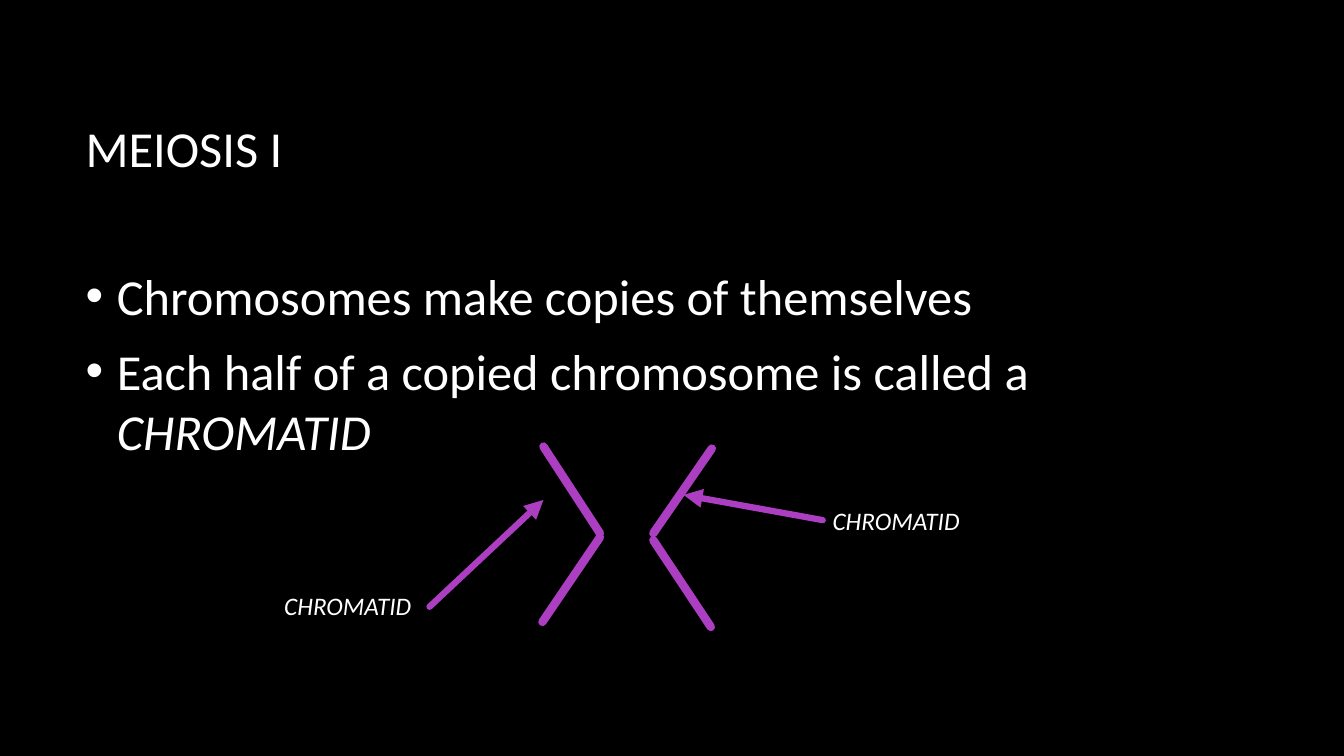
from lxml.etree import SubElement
from pptx import Presentation
from pptx.dml.color import RGBColor
from pptx.enum.shapes import MSO_CONNECTOR
from pptx.enum.text import MSO_ANCHOR
from pptx.oxml.ns import qn
from pptx.util import Inches, Pt

FONT = "Calibri"
BLACK = "000000"
WHITE = "FFFFFF"
PURPLE = "AC3EC1"


def color(value):
    return RGBColor.from_string(value)


class SlideBuilder:
    def __init__(self, deck):
        self.page = deck.slides.add_slide(deck.slide_layouts[6])
        fill = self.page.background.fill
        fill.solid()
        fill.fore_color.rgb = color(BLACK)

    def text(self, left, top, width, height, paragraphs, size,
             anchor=MSO_ANCHOR.TOP, bullets=False, wrap=True):
        box = self.page.shapes.add_textbox(
            Inches(left), Inches(top), Inches(width), Inches(height))
        frame = box.text_frame
        frame.word_wrap = wrap
        frame.vertical_anchor = anchor
        for index, runs in enumerate(paragraphs):
            para = frame.add_paragraph() if index else frame.paragraphs[0]
            if bullets:
                self.bullet(para)
                para.space_after = Pt(10)
            for words, italic in runs:
                span = para.add_run()
                span.text = words
                span.font.name = FONT
                span.font.size = Pt(size)
                span.font.italic = italic
                span.font.color.rgb = color(WHITE)

    def bullet(self, para):
        properties = para._p.get_or_add_pPr()
        properties.set("marL", str(Inches(0.31)))
        properties.set("indent", str(-Inches(0.31)))
        bullet_color = SubElement(properties, qn("a:buClr"))
        SubElement(bullet_color, qn("a:srgbClr"), val=WHITE)
        SubElement(properties, qn("a:buFont"), typeface="Arial")
        SubElement(properties, qn("a:buChar"), char="•")

    def line(self, start, end, width, arrow=False):
        connector = self.page.shapes.add_connector(
            MSO_CONNECTOR.STRAIGHT, *map(Inches, start + end))
        connector.line.color.rgb = color(PURPLE)
        connector.line.width = Pt(width)
        outline = connector.line._get_or_add_ln()
        outline.set("cap", "rnd")
        SubElement(outline, qn("a:round"))
        if arrow:
            SubElement(outline, qn("a:tailEnd"), type="triangle")
        SubElement(connector._element.spPr, qn("a:effectLst"))


def main():
    deck = Presentation()
    deck.slide_width = Inches(13.33)
    deck.slide_height = Inches(7.5)
    slide = SlideBuilder(deck)

    slide.text(0.75, 0.67, 11.08, 1.59, [[("MEIOSIS I", False)]], 36,
               MSO_ANCHOR.MIDDLE)
    slide.text(0.75, 2.34, 11.08, 2.52, [
        [("Chromosomes make copies of themselves", False)],
        [("Each half of a copied chromosome is called a ", False),
         ("CHROMATID", True)],
    ], 36, MSO_ANCHOR.MIDDLE, bullets=True)

    chromatid_arms = [
        ((5.39, 4.43), (5.95, 5.29)),
        ((6.48, 5.36), (7.05, 6.22)),
        ((5.95, 5.33), (5.38, 6.17)),
        ((7.06, 4.45), (6.48, 5.29)),
    ]
    for start, end in chromatid_arms:
        slide.line(start, end, 6)

    label = [[("CHROMATID", True)]]
    slide.text(2.72, 5.81, 1.91, 0.4, label, 18)
    slide.text(8.16, 4.96, 1.47, 0.4, label, 18, wrap=False)
    slide.line((4.26, 6.02), (5.39, 4.96), 4.5, arrow=True)
    slide.line((8.16, 5.16), (6.78, 4.91), 4.5, arrow=True)

    deck.save("out.pptx")


if __name__ == "__main__":
    main()
